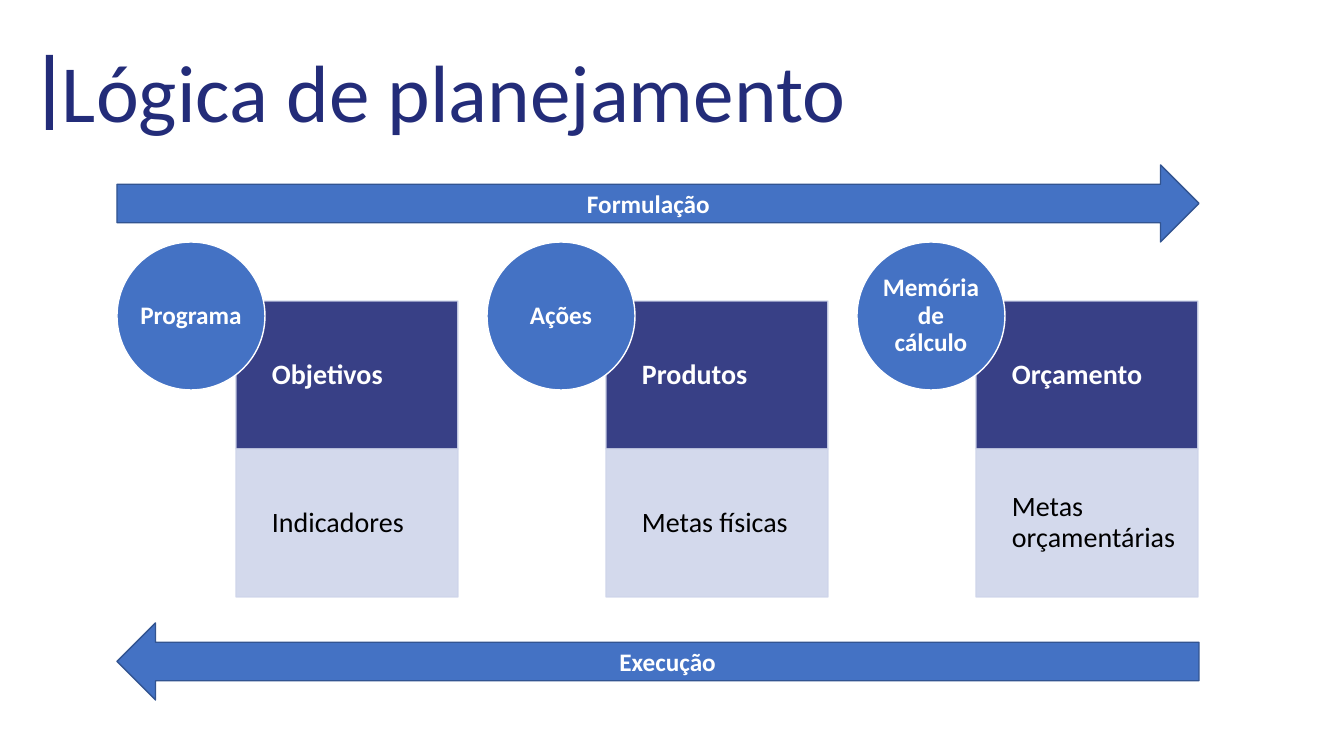
import pptx
import pptx.dml.color
import pptx.enum.shapes
import pptx.enum.text
import pptx.oxml
import pptx.oxml.ns
import pptx.util

RGB = pptx.dml.color.RGBColor
SHAPE = pptx.enum.shapes.MSO_SHAPE
ALIGN = pptx.enum.text.PP_ALIGN
ANCHOR = pptx.enum.text.MSO_ANCHOR

NAVY = RGB(0x23, 0x2C, 0x79)
BLUE = RGB(0x44, 0x72, 0xC4)
EDGE = RGB(0x32, 0x54, 0x91)
LILAC = RGB(0xCF, 0xD5, 0xEA)
WHITE = RGB(0xFF, 0xFF, 0xFF)
BLACK = RGB(0x00, 0x00, 0x00)

STAGES = [
    ("Programa", "Objetivos", "Indicadores"),
    ("Ações", "Produtos", "Metas físicas"),
    ("Memória de cálculo", "Orçamento", "Metas orçamentárias"),
]
LEFT, WIDTH = 117, 1082
STAGE_PITCH = 370
CIRCLE_TOP, CIRCLE_SIZE = 242, 148
CARD_OFFSET, CARD_TOP, CARD_WIDTH, CARD_HEIGHT = 119, 301, 222, 148


def emu(px):
    return round(px * 12192000 / 1344)


def set_opacity(paint, percent):
    """Add an alpha value to the first colour inside a fill or line element."""
    color = paint.find(".//" + pptx.oxml.ns.qn("a:srgbClr"))
    color.append(pptx.oxml.parse_xml(
        f'<a:alpha {pptx.oxml.ns.nsdecls("a")} val="{percent * 1000}"/>'))


class SlideBuilder:
    def __init__(self, page, font="Calibri"):
        self.page = page
        self.font = font

    def put_text(self, box, text, size, color, bold=False, align=ALIGN.LEFT,
                 anchor=ANCHOR.MIDDLE, spacing=1.0, insets=(10, 5, 10, 5)):
        frame = box.text_frame
        frame.auto_size = pptx.enum.text.MSO_AUTO_SIZE.NONE
        frame.word_wrap = True
        frame.vertical_anchor = anchor
        (frame.margin_left, frame.margin_top,
         frame.margin_right, frame.margin_bottom) = map(emu, insets)
        para = frame.paragraphs[0]
        para.alignment = align
        para.line_spacing = spacing
        span = para.add_run()
        span.text = text
        span.font.name = self.font
        span.font.size = pptx.util.Pt(size)
        span.font.bold = bold
        span.font.color.rgb = color

    def title(self, text, left, top, width, height):
        box = self.page.shapes.title
        box.left, box.top, box.width, box.height = map(
            emu, (left, top, width, height))
        self.put_text(box, text, 58, NAVY, anchor=ANCHOR.TOP)

    def shape(self, kind, left, top, width, height, fill, line=None, opacity=100):
        shape = self.page.shapes.add_shape(
            kind, *map(emu, (left, top, width, height)))
        shape.shadow.inherit = False
        shape.fill.solid()
        shape.fill.fore_color.rgb = fill
        if line is None:
            shape.line.fill.background()
        else:
            shape.line.color.rgb = line
            shape.line.width = pptx.util.Pt(1)
        if opacity < 100:
            properties = shape.element.spPr
            for tag in ("a:solidFill", "a:ln"):
                set_opacity(properties.find(pptx.oxml.ns.qn(tag)), opacity)
        return shape

    def arrow(self, kind, top, text):
        arrow = self.shape(kind, LEFT, top, WIDTH, 77, BLUE, EDGE)
        self.put_text(arrow, text, 18, WHITE, bold=True, align=ALIGN.CENTER)

    def card(self, left, top, text, fill, color, bold=False):
        card = self.shape(SHAPE.RECTANGLE, left, top, CARD_WIDTH, CARD_HEIGHT,
                          fill, LILAC, opacity=90)
        self.put_text(card, text, 20, color, bold=bold, spacing=0.9,
                      insets=(36, 16, 16, 16))

    def circle(self, left, text):
        circle = self.shape(SHAPE.OVAL, left, CIRCLE_TOP, CIRCLE_SIZE,
                            CIRCLE_SIZE, BLUE, WHITE)
        self.put_text(circle, text, 18, WHITE, bold=True, align=ALIGN.CENTER,
                      spacing=0.9, insets=(0, 0, 0, 0))

    def stage(self, left, name, aim, measure):
        """Draw two stacked cards with a circle over their top left corner."""
        card_left = left + CARD_OFFSET
        self.card(card_left, CARD_TOP, aim, NAVY, WHITE, bold=True)
        self.card(card_left, CARD_TOP + CARD_HEIGHT, measure, LILAC, BLACK)
        self.circle(left, name)


def main():
    deck = pptx.Presentation()
    deck.slide_width, deck.slide_height = emu(1344), emu(756)
    builder = SlideBuilder(deck.slides.add_slide(deck.slide_layouts[5]))
    builder.title("Lógica de planejamento", 52, 36, 1194, 112)
    builder.shape(SHAPE.RECTANGLE, 46, 55, 7, 75, NAVY)
    builder.arrow(SHAPE.RIGHT_ARROW, 165, "Formulação")
    for index, labels in enumerate(STAGES):
        builder.stage(LEFT + index * STAGE_PITCH, *labels)
    builder.arrow(SHAPE.LEFT_ARROW, 623, "Execução")
    deck.save("out.pptx")


if __name__ == "__main__":
    main()
